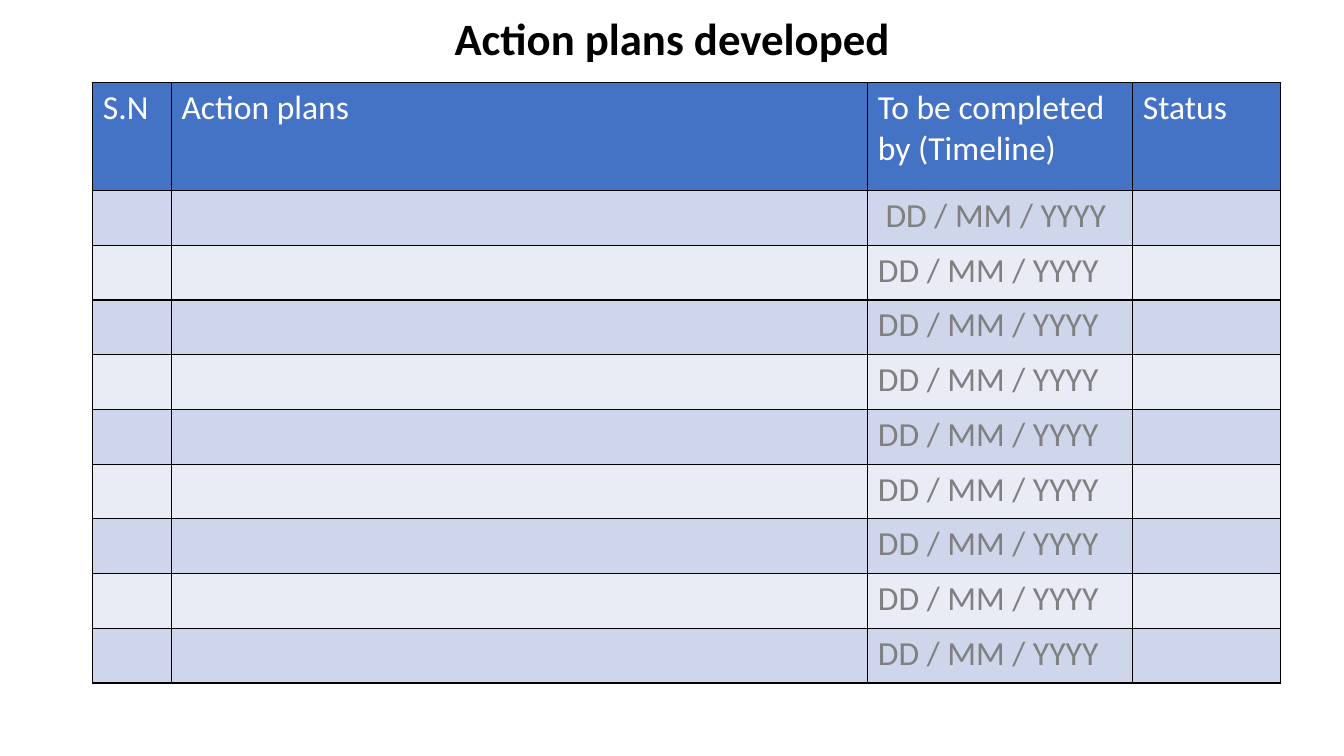
from lxml.etree import SubElement as Sub
from pptx import Presentation
from pptx.dml.color import RGBColor as RGB
from pptx.enum.text import MSO_ANCHOR as Anchor, PP_ALIGN as Align
from pptx.oxml.ns import qn
from pptx.util import Cm, Pt

TITLE = "Action plans developed"
HEADS = ["S.N", "Action plans", "To be completed by (Timeline)", "Status"]
DATE = "DD / MM / YYYY"
DATES = [" " + DATE] + [DATE] * 8
ROWS = [HEADS] + [["", "", date, ""] for date in DATES]
WIDTHS = [1.98, 17.55, 6.68, 3.71]
HEAD_H, ROW_H = 2.72, 1.38
LEFT, TOP = 2.34, 2.08
BLUE, BANDS = "4472C4", ["CFD5EA", "E9EBF5"]
WHITE, GRAY, BLACK = "FFFFFF", "808080", "000000"


def color(code):
    return RGB.from_string(code)


def style(par, size, code, bold=False):
    font = par.font
    font.name, font.size, font.bold = "Calibri", Pt(size), bold
    font.color.rgb = color(code)


def border(cell):
    props = cell._tc.get_or_add_tcPr()
    for side in ("lnL", "lnR", "lnT", "lnB"):
        line = Sub(props, qn("a:" + side), w=str(Pt(1)))
        fill = Sub(line, qn("a:solidFill"))
        Sub(fill, qn("a:srgbClr"), val=BLACK)


def add_title(slide):
    title = slide.shapes.title
    title.left, title.top = Cm(LEFT), Cm(0)
    title.width, title.height = Cm(29.21), Cm(TOP)
    frame = title.text_frame
    frame.text = TITLE
    frame.vertical_anchor = Anchor.MIDDLE
    par = frame.paragraphs[0]
    par.alignment, par.line_spacing = Align.CENTER, 0.9
    style(par, 32, BLACK, True)


def add_plan(slide):
    heights = [HEAD_H] + [ROW_H] * len(DATES)
    table = slide.shapes.add_table(
        len(ROWS), len(WIDTHS), Cm(LEFT), Cm(TOP),
        Cm(sum(WIDTHS)), Cm(sum(heights))).table
    for col, width in zip(table.columns, WIDTHS):
        col.width = Cm(width)
    for r, texts in enumerate(ROWS):
        table.rows[r].height = Cm(heights[r])
        for c, text in enumerate(texts):
            cell = table.cell(r, c)
            cell.text = text
            style(cell.text_frame.paragraphs[0], 24, GRAY if r else WHITE)
            border(cell)
            cell.fill.solid()
            cell.fill.fore_color.rgb = color(BANDS[(r - 1) % 2] if r else BLUE)


def main():
    deck = Presentation()
    deck.slide_width, deck.slide_height = Cm(33.87), Cm(19.05)
    slide = deck.slides.add_slide(deck.slide_layouts[5])
    add_title(slide)
    add_plan(slide)
    deck.save("out.pptx")


if __name__ == "__main__":
    main()
